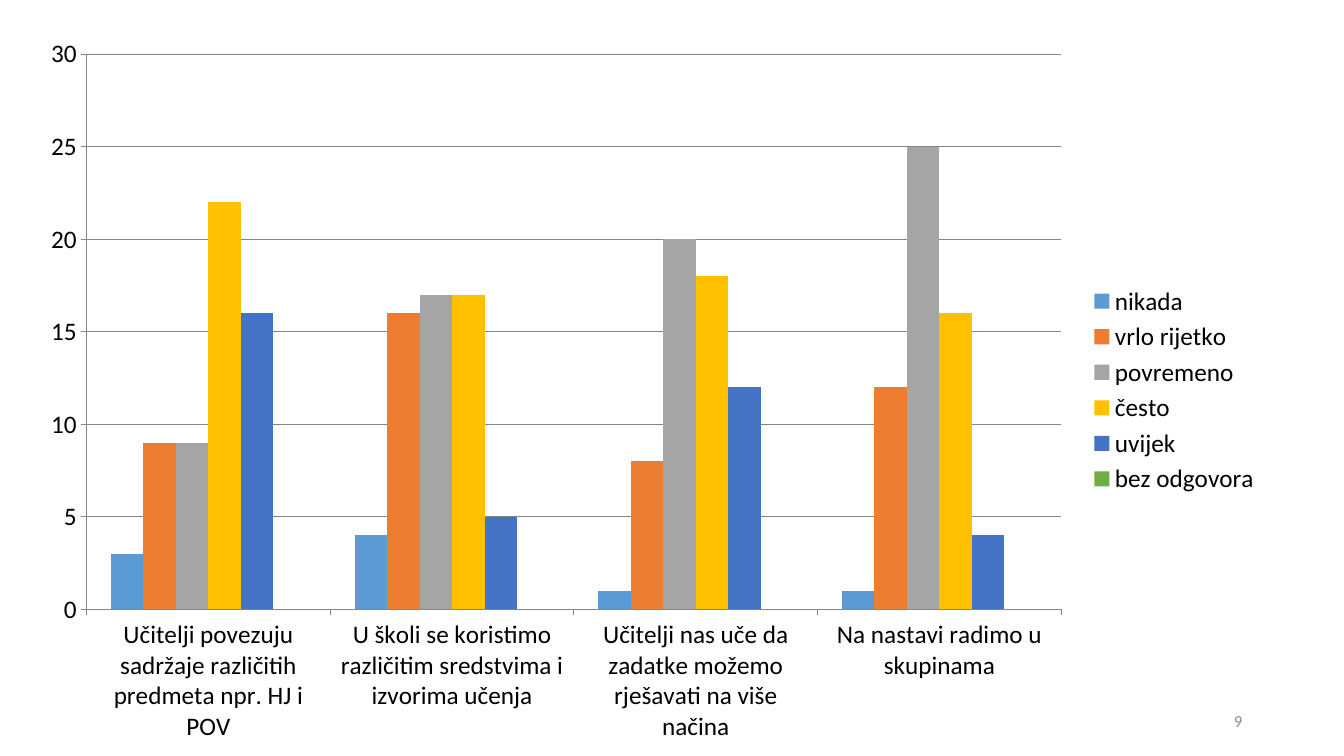
from pptx import Presentation
from pptx.chart.data import CategoryChartData
from pptx.dml.color import RGBColor
from pptx.enum.chart import XL_CHART_TYPE, XL_LEGEND_POSITION, XL_TICK_MARK
from pptx.enum.text import MSO_ANCHOR, PP_ALIGN
from pptx.util import Inches, Pt

COLORS = {
    "text": "000000",
    "axis": "868686",
    "page": "8C8C8C",
    "nikada": "5B9BD5",
    "vrlo rijetko": "ED7D31",
    "povremeno": "A5A5A5",
    "često": "FFC000",
    "uvijek": "4472C4",
    "bez odgovora": "70AD47",
}
STATEMENTS = [
    "Učitelji povezuju sadržaje različitih predmeta npr. HJ i POV",
    "U školi se koristimo različitim sredstvima i izvorima učenja",
    "Učitelji nas uče da zadatke možemo rješavati na više načina",
    "Na nastavi radimo u skupinama",
]
ANSWERS = {
    "nikada": (3, 4, 1, 1),
    "vrlo rijetko": (9, 16, 8, 12),
    "povremeno": (9, 17, 20, 25),
    "često": (22, 17, 18, 16),
    "uvijek": (16, 5, 12, 4),
    "bez odgovora": (0, 0, 0, 0),
}


def color(name):
    """Return the named colour."""
    return RGBColor.from_string(COLORS[name])


def set_font(font, size, color_name):
    """Apply the slide's typeface with a size and colour."""
    for attribute, value in {"name": "Calibri", "size": Pt(size), "bold": False}.items():
        setattr(font, attribute, value)
    font.color.rgb = color(color_name)


def style_line(line):
    """Draw a chart line thin and grey."""
    line.color.rgb = color("axis")
    line.width = Pt(0.75)


def add_answer_chart(slide, left, top, width, height):
    """Add the clustered columns of survey answers."""
    data = CategoryChartData(number_format="General")
    data.categories = STATEMENTS
    for answer, counts in ANSWERS.items():
        data.add_series(answer, counts)
    chart = slide.shapes.add_chart(
        XL_CHART_TYPE.COLUMN_CLUSTERED,
        Inches(left), Inches(top), Inches(width), Inches(height), data,
    ).chart
    set_font(chart.font, 18, "text")
    chart.has_title = False
    chart.has_legend = True
    chart.legend.position = XL_LEGEND_POSITION.RIGHT
    chart.legend.include_in_layout = False
    plot = chart.plots[0]
    plot.gap_width = 150
    plot.overlap = 0
    plot.vary_by_categories = False
    for series in plot.series:
        series.format.fill.solid()
        series.format.fill.fore_color.rgb = color(series.name)
    for axis in (chart.category_axis, chart.value_axis):
        axis.major_tick_mark = XL_TICK_MARK.OUTSIDE
        axis.minor_tick_mark = XL_TICK_MARK.NONE
        style_line(axis.format.line)
    value_axis = chart.value_axis
    for attribute, value in {
        "minimum_scale": 0, "maximum_scale": 30, "major_unit": 5, "has_major_gridlines": True,
    }.items():
        setattr(value_axis, attribute, value)
    style_line(value_axis.major_gridlines.format.line)


def add_page_number(slide, left, top, width, height):
    """Add the page number at the right of its box."""
    shape = slide.shapes.add_textbox(Inches(left), Inches(top), Inches(width), Inches(height))
    frame = shape.text_frame
    frame.word_wrap = True
    frame.vertical_anchor = MSO_ANCHOR.MIDDLE
    paragraph = frame.paragraphs[0]
    paragraph.text = "9"
    paragraph.alignment = PP_ALIGN.RIGHT
    set_font(paragraph.runs[0].font, 12, "page")


def main():
    """Build and save the survey slide."""
    presentation = Presentation()
    presentation.slide_width = Inches(13.33)
    presentation.slide_height = Inches(7.5)
    slide = presentation.slides.add_slide(presentation.slide_layouts[6])
    add_answer_chart(slide, 0.26, 0.24, 12.34, 7.26)
    add_page_number(slide, 9.42, 6.95, 3, 0.4)
    presentation.save("out.pptx")


if __name__ == "__main__":
    main()
